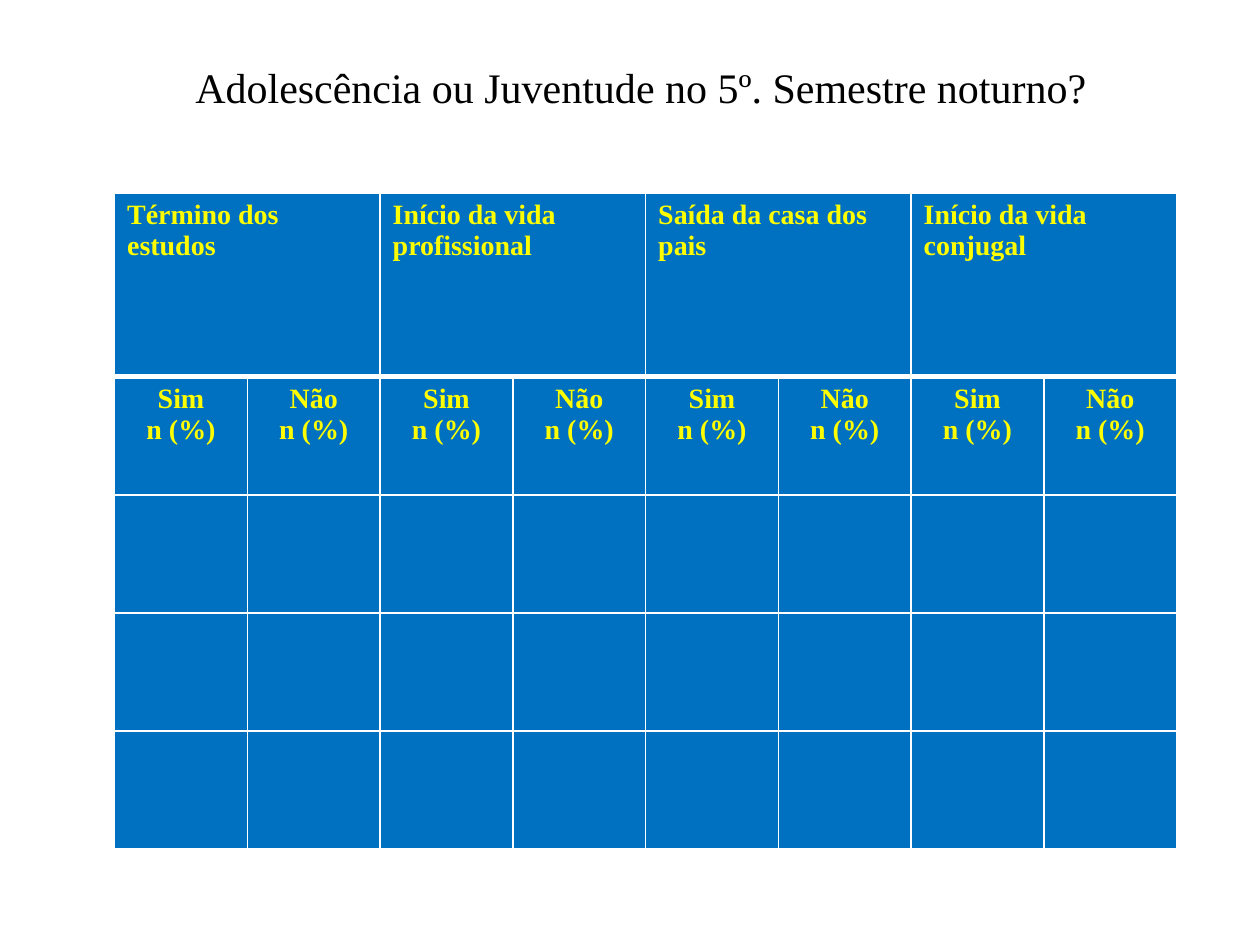
from lxml import etree
from pptx import Presentation
from pptx.dml.color import RGBColor
from pptx.enum.text import MSO_ANCHOR, PP_ALIGN
from pptx.oxml.ns import qn
from pptx.util import Pt

LEFT, CENTER = PP_ALIGN.LEFT, PP_ALIGN.CENTER
TOP = MSO_ANCHOR.TOP

# Content
TITLE = "Adolescência ou Juventude no 5º. Semestre noturno?"
EVENTS = [
    "Término dos estudos",
    "Início da vida profissional",
    "Saída da casa dos pais",
    "Início da vida conjugal",
]
ANSWERS = ["Sim\vn (%)", "Não\vn (%)"]
EMPTY_ROWS = 3

# Layout and style
FONT = "Times New Roman"
BLACK, YELLOW, BLUE, WHITE = "000000", "FFFF00", "0070C0", "FFFFFF"
TABLE_LEFT, TABLE_TOP = 65.5, 110.2
COLUMN_WIDTH, HEADER_HEIGHT, ROW_HEIGHT = 75.87, 105.1, 67.5


def color(value):
    return RGBColor.from_string(value)


def write(paragraph, text, size, font_color, align=LEFT, bold=False):
    paragraph.text = text
    paragraph.alignment = align
    font = paragraph.font
    font.name, font.size, font.bold = FONT, Pt(size), bold
    font.color.rgb = color(font_color)


def add_borders(cell, bottom, top):
    properties = cell._tc.get_or_add_tcPr()
    for side, width in (("lnL", 1), ("lnR", 1), ("lnT", top), ("lnB", bottom)):
        line = etree.SubElement(properties, qn(f"a:{side}"), w=str(Pt(width)))
        fill = etree.SubElement(line, qn("a:solidFill"))
        etree.SubElement(fill, qn("a:srgbClr"), val=WHITE)


deck = Presentation()
deck.slide_width, deck.slide_height = Pt(720), Pt(540)
page = deck.slides.add_slide(deck.slide_layouts[5])

# Title
title = page.shapes.title
title.left, title.top, title.width, title.height = Pt(104.4), Pt(31.7), Pt(528.5), Pt(36)
title.text_frame.word_wrap = True
title.text_frame.vertical_anchor = TOP
write(title.text_frame.paragraphs[0], TITLE, 24, BLACK)

# Table grid
span = len(ANSWERS)
column_count = len(EVENTS) * span
heights = [HEADER_HEIGHT] + [ROW_HEIGHT] * (1 + EMPTY_ROWS)
table = page.shapes.add_table(
    len(heights), column_count, Pt(TABLE_LEFT), Pt(TABLE_TOP),
    Pt(COLUMN_WIDTH * column_count), Pt(sum(heights)),
).table
for column in table.columns:
    column.width = Pt(COLUMN_WIDTH)
for index, (row, height) in enumerate(zip(table.rows, heights)):
    row.height = Pt(height)
    for cell in row.cells:
        add_borders(cell, bottom=3 if index == 0 else 1, top=3 if index == 1 else 1)
        cell.fill.solid()
        cell.fill.fore_color.rgb = color(BLUE)

# Table headings
for index, event in enumerate(EVENTS):
    first = index * span
    heading = table.cell(0, first)
    heading.merge(table.cell(0, first + span - 1))
    write(heading.text_frame.paragraphs[0], event, 16, YELLOW, bold=True)
    for offset, answer in enumerate(ANSWERS):
        paragraph = table.cell(1, first + offset).text_frame.paragraphs[0]
        write(paragraph, answer, 16, YELLOW, CENTER, bold=True)

deck.save("out.pptx")
